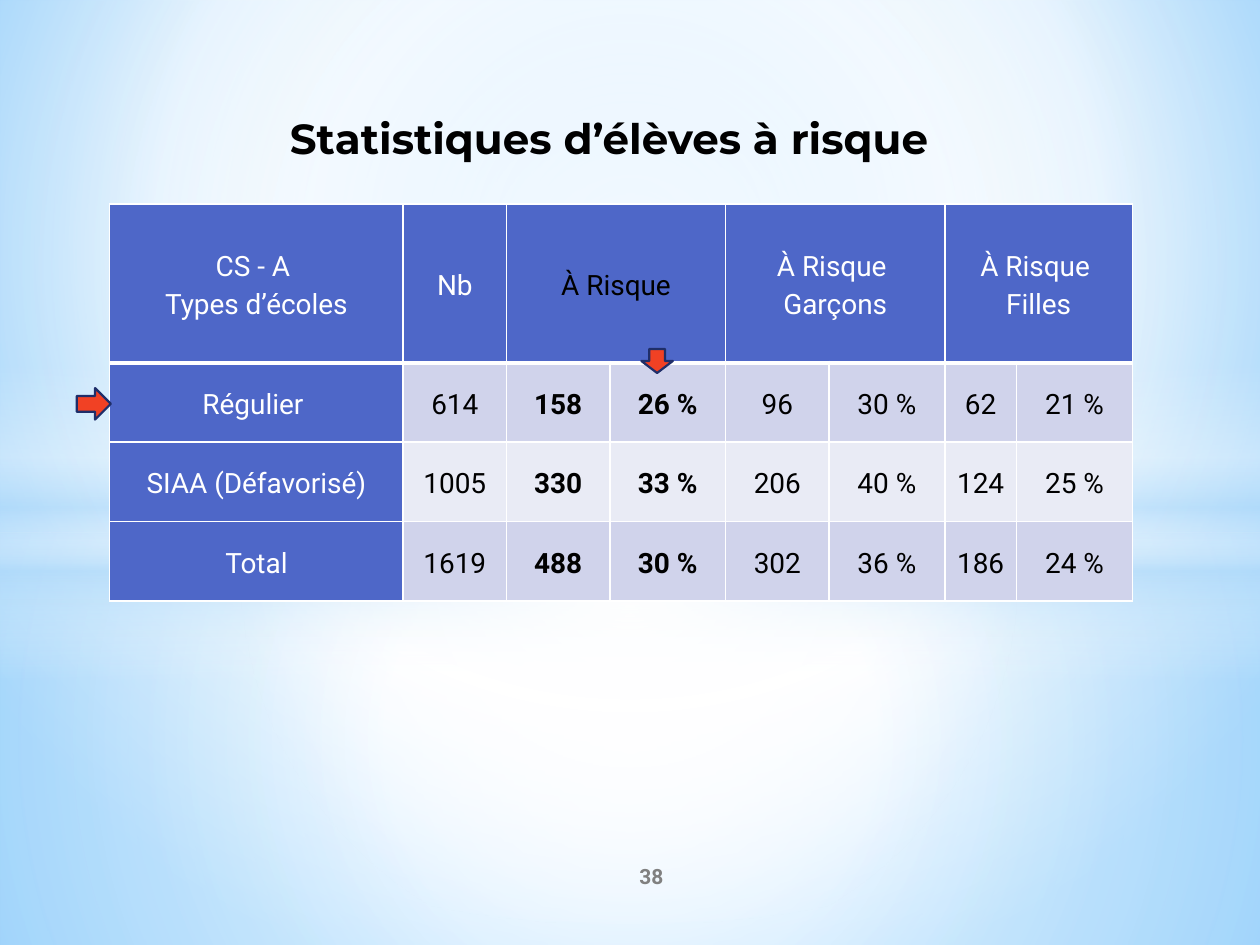
from dataclasses import dataclass

from lxml import etree
from pptx import Presentation
from pptx import util as u
from pptx.dml.color import RGBColor
from pptx.enum import shapes, text
from pptx.oxml.ns import qn


@dataclass(frozen=True)
class Theme:
    heading_font: str = "Montserrat"
    body_font: str = "Roboto"
    title_size: float = 24
    table_size: float = 16
    number_size: float = 12
    black: str = "000000"
    white: str = "FFFFFF"
    gray: str = "808080"
    header: str = "4E67C8"
    odd_row: str = "D0D3EB"
    even_row: str = "E9EBF5"
    arrow: str = "F14124"
    arrow_line: str = "1F2E69"
    mist: str = "B4DCFA"
    sky_center: str = "9ED5FF"
    sky_edge: str = "5BB9FF"


@dataclass(frozen=True)
class Box:
    left: float
    top: float
    width: float
    height: float

    def lengths(self) -> list:
        return [u.Inches(v) for v in (self.left, self.top, self.width, self.height)]


@dataclass(frozen=True)
class Gradient:
    stops: tuple
    focus: tuple | None = (50, 50, 50, 50)


@dataclass(frozen=True)
class Glow:
    box: Box
    gradient: Gradient
    outline: int = shapes.MSO_SHAPE.RECTANGLE


@dataclass(frozen=True)
class Label:
    box: Box
    words: str
    font: str
    size: float
    color: str
    anchor: int


@dataclass(frozen=True)
class Arrow:
    box: Box
    rotation: float = 0


T = Theme()
SKY = Gradient(((0, T.sky_center, 100), (60, T.white, 100), (100, T.sky_edge, 100)),
               (20, 10, 20, 60))
GLOWS = [
    Glow(Box(0, 4.23, 10, 3.27),
         Gradient(((0, T.white, 91), (37, T.white, 76), (100, T.mist, 79)))),
    Glow(Box(0, 0, 10, 4.23),
         Gradient(((0, T.white, 89), (48, T.white, 62), (100, T.mist, 79)))),
    Glow(Box(0, 2.9, 10, 2.5),
         Gradient(((0, T.white, 0), (29, T.white, 30), (45, T.mist, 40),
                   (55, T.white, 26), (65, T.mist, 60), (100, T.white, 0)), None)),
    Glow(Box(0, 1.75, 10, 5.58),
         Gradient(((0, T.white, 100), (54, T.white, 0))), shapes.MSO_SHAPE.OVAL),
]
LABELS = [
    Label(Box(4.17, 6.75, 2, 0.4), "38", T.body_font, T.number_size, T.gray,
          text.MSO_ANCHOR.MIDDLE),
    Label(Box(0.98, 0.84, 7.8, 0.5), "Statistiques d’élèves à risque ",
          T.heading_font, T.title_size, T.black, text.MSO_ANCHOR.TOP),
]
ARROWS = [Arrow(Box(5.09, 2.77, 0.25, 0.19)), Arrow(Box(0.62, 3.07, 0.25, 0.27), 270)]

TABLE_BOX = Box(0.87, 1.62, 8.11, 3.15)
COLUMN_WIDTHS = [2.33, 0.82, 0.82, 0.92, 0.82, 0.92, 0.57, 0.92]
ROW_HEIGHTS = [1.26, 0.63, 0.63, 0.63]
HEADINGS = {0: "CS - A \nTypes d’écoles", 1: "Nb", 2: "À Risque",
            4: "À Risque \nGarçons", 6: "À Risque \nFilles"}
RISK_COLUMNS = (2, 3)
SCHOOLS = [
    ("Régulier ", "614", "158", "26 %", "96", "30 %", "62", "21 %"),
    ("SIAA (Défavorisé)", "1005", "330", "33 %", "206", "40 %", "124", "25 %"),
    ("Total", "1619", "488", "30 %", "302", "36 %", "186", "24 %"),
]


def rgb(color: str) -> RGBColor:
    return RGBColor.from_string(color)


def add_node(parent, tag: str, **attributes):
    return etree.SubElement(parent, qn(tag), {k: str(v) for k, v in attributes.items()})


def paint_gradient(fill, properties, gradient: Gradient) -> None:
    fill.solid()
    grad = etree.Element(qn("a:gradFill"), rotWithShape="1")
    stops = add_node(grad, "a:gsLst")
    for position, color, opacity in gradient.stops:
        stop = add_node(stops, "a:gs", pos=position * 1000)
        add_node(add_node(stop, "a:srgbClr", val=color), "a:alpha", val=opacity * 1000)
    if gradient.focus:
        radial = add_node(grad, "a:path", path="circle")
        sides = zip("ltrb", gradient.focus)
        add_node(radial, "a:fillToRect", **{side: v * 1000 for side, v in sides})
    else:
        add_node(grad, "a:lin", ang=90 * 60000, scaled=0)
    properties.replace(properties.find(qn("a:solidFill")), grad)


def format_text(frame, font: str, size: float, color: str, bold: bool) -> None:
    for paragraph in frame.paragraphs:
        paragraph.alignment = text.PP_ALIGN.CENTER
        for run in paragraph.runs:
            run.font.name = font
            run.font.size = u.Pt(size)
            run.font.bold = bold
            run.font.color.rgb = rgb(color)


def draw_glow(slide, glow: Glow) -> None:
    shape = slide.shapes.add_shape(glow.outline, *glow.box.lengths())
    shape.shadow.inherit = False
    shape.line.fill.background()
    paint_gradient(shape.fill, shape.element.spPr, glow.gradient)


def draw_label(slide, label: Label) -> None:
    frame = slide.shapes.add_textbox(*label.box.lengths()).text_frame
    frame.word_wrap = True
    frame.vertical_anchor = label.anchor
    frame.text = label.words
    format_text(frame, label.font, label.size, label.color, True)


def draw_arrow(slide, arrow: Arrow) -> None:
    shape = slide.shapes.add_shape(shapes.MSO_SHAPE.DOWN_ARROW, *arrow.box.lengths())
    shape.rotation = arrow.rotation
    shape.shadow.inherit = False
    shape.fill.solid()
    shape.fill.fore_color.rgb = rgb(T.arrow)
    shape.line.color.rgb = rgb(T.arrow_line)
    shape.line.width = u.Pt(1.25)


def style_cell(cell, fill: str, color: str, bold: bool, bottom: float) -> None:
    cell.margin_left = cell.margin_right = u.Inches(0.05)
    cell.margin_top = cell.margin_bottom = 0
    cell.vertical_anchor = text.MSO_ANCHOR.MIDDLE
    format_text(cell.text_frame, T.body_font, T.table_size, color, bold)
    for paragraph in cell.text_frame.paragraphs:
        paragraph.line_spacing = 1.15
    properties = cell._tc.get_or_add_tcPr()
    for side, width in (("L", 1), ("R", 1), ("T", 1), ("B", bottom)):
        border = add_node(properties, f"a:ln{side}", w=u.Pt(width))
        add_node(add_node(border, "a:solidFill"), "a:srgbClr", val=T.white)
    cell.fill.solid()
    cell.fill.fore_color.rgb = rgb(fill)


def draw_table(slide) -> None:
    table = slide.shapes.add_table(
        len(ROW_HEIGHTS), len(COLUMN_WIDTHS), *TABLE_BOX.lengths()).table
    for column, width in zip(table.columns, COLUMN_WIDTHS):
        column.width = u.Inches(width)
    for row, height in zip(table.rows, ROW_HEIGHTS):
        row.height = u.Inches(height)
    for first in (2, 4, 6):
        table.cell(0, first).merge(table.cell(0, first + 1))
    for c in range(len(COLUMN_WIDTHS)):
        heading = table.cell(0, c)
        heading.text_frame.text = HEADINGS.get(c, "")
        style_cell(heading, T.header, T.black if c == 2 else T.white, False, 3)
    for r, school in enumerate(SCHOOLS, start=1):
        band = T.odd_row if r % 2 else T.even_row
        for c, words in enumerate(school):
            cell = table.cell(r, c)
            cell.text_frame.text = words
            fill, color = (band, T.black) if c else (T.header, T.white)
            style_cell(cell, fill, color, c in RISK_COLUMNS, 1)


def main() -> None:
    deck = Presentation()
    deck.slide_width, deck.slide_height = u.Inches(10), u.Inches(7.5)
    slide = deck.slides.add_slide(deck.slide_layouts[6])
    sky = slide.background.fill
    sky.solid()
    paint_gradient(sky, slide.element.xpath(".//p:bgPr")[0], SKY)
    for glow in GLOWS:
        draw_glow(slide, glow)
    for label in LABELS:
        draw_label(slide, label)
    draw_table(slide)
    for arrow in ARROWS:
        draw_arrow(slide, arrow)
    deck.save("out.pptx")


if __name__ == "__main__":
    main()
